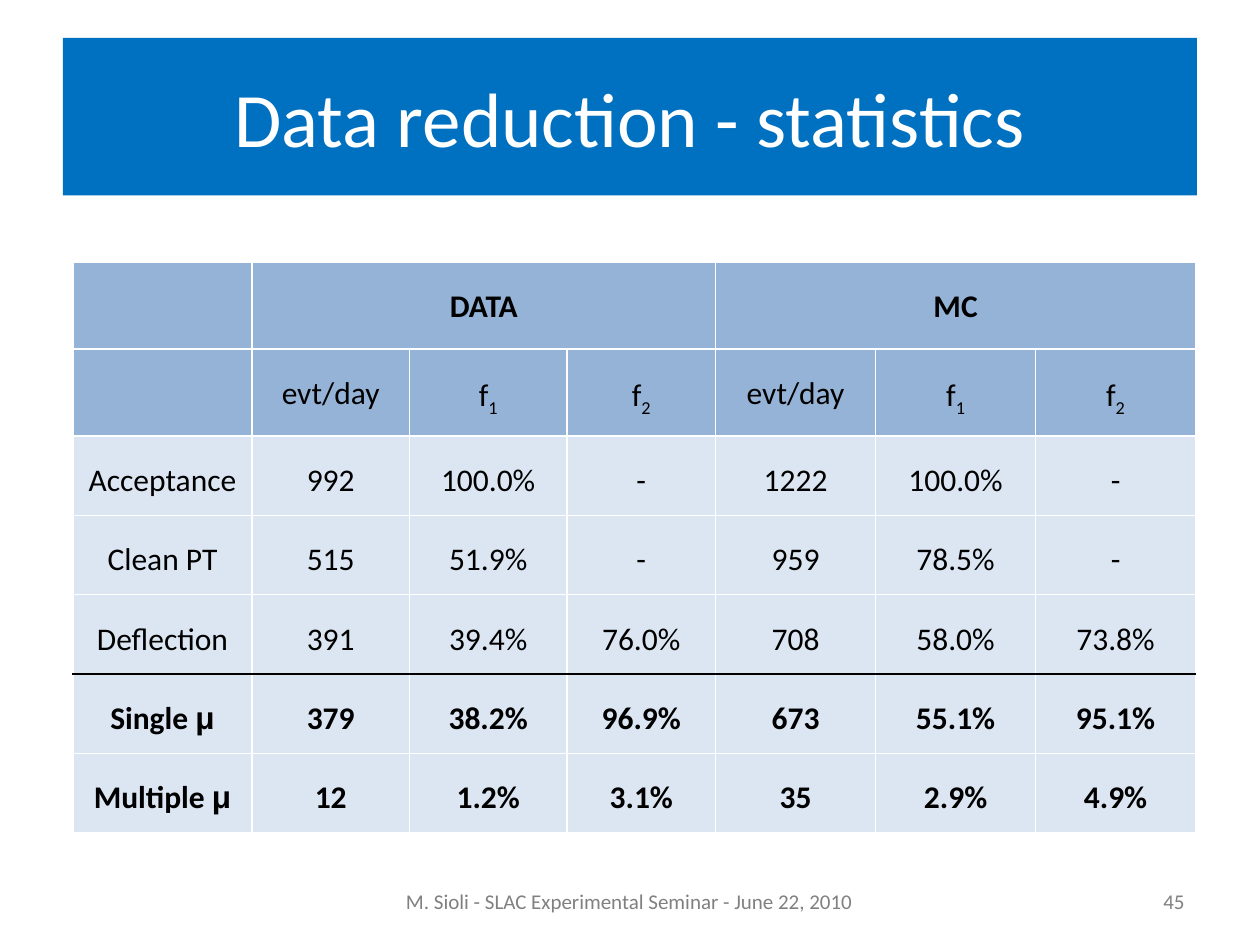
import dataclasses
import lxml.etree
import pptx
import pptx.dml.color
import pptx.enum.shapes
import pptx.enum.text
import pptx.oxml.ns
import pptx.util

Inches = pptx.util.Inches
Align = pptx.enum.text.PP_ALIGN
Anchor = pptx.enum.text.MSO_ANCHOR
qn = pptx.oxml.ns.qn


@dataclasses.dataclass(frozen=True)
class Theme:
    white: str = "FFFFFF"
    black: str = "000000"
    gray: str = "808080"
    banner: str = "0070C0"
    head: str = "95B3D7"
    body: str = "DCE6F2"
    font: str = "Calibri"
    greek: str = "Arial"
    title: int = 44
    cell: int = 18
    foot: int = 12


THEME = Theme()
WIDTHS = [1.42, 1.25, 1.25, 1.18, 1.27, 1.27, 1.27]
HEIGHTS = [0.69] * 2 + [0.63] * 5
ROWS = [
    ["", "DATA", "", "", "MC", "", ""],
    ["", "evt/day", "f_1", "f_2", "evt/day", "f_1", "f_2"],
    ["Acceptance", "992", "100.0%", "-", "1222", "100.0%", "-"],
    ["Clean PT", "515", "51.9%", "-", "959", "78.5%", "-"],
    ["Deflection", "391", "39.4%", "76.0%", "708", "58.0%", "73.8%"],
    ["Single μ", "379", "38.2%", "96.9%", "673", "55.1%", "95.1%"],
    ["Multiple μ", "12", "1.2%", "3.1%", "35", "2.9%", "4.9%"],
]
HEADS = 2
BOLD = (0, 5, 6)
RULE = 5


def paint(fill, color):
    fill.solid()
    fill.fore_color.rgb = pptx.dml.color.RGBColor.from_string(color)


def apply(item, form):
    for name, value in form.items():
        setattr(item, name, value)


def add_run(para, text, size, color, **form):
    run = para.add_run()
    run.text = text
    apply(run.font, {"name": THEME.font, "size": pptx.util.Pt(size), **form})
    paint(run.font.fill, color)
    return run


def write(shape, text, size, color, align):
    frame = shape.text_frame
    apply(frame, {"word_wrap": True, "vertical_anchor": Anchor.MIDDLE})
    para = frame.paragraphs[0]
    para.alignment = align
    add_run(para, text, size, color)


def add_title(slide, text):
    box = slide.shapes.add_shape(
        pptx.enum.shapes.MSO_SHAPE.RECTANGLE,
        Inches(0.5), Inches(0.3), Inches(9), Inches(1.25))
    box.shadow.inherit = False
    paint(box.fill, THEME.banner)
    box.line.fill.background()
    write(box, text, THEME.title, THEME.white, Align.CENTER)


def add_foot(slide, text, left, width, align):
    box = slide.shapes.add_textbox(
        Inches(left), Inches(6.95), Inches(width), Inches(0.4))
    write(box, text, THEME.foot, THEME.gray, align)


def add_edge(cell, side, color):
    props = cell._tc.get_or_add_tcPr()
    edge = lxml.etree.SubElement(
        props, qn(f"a:ln{side}"), w=str(pptx.util.Pt(1)))
    fill = lxml.etree.SubElement(edge, qn("a:solidFill"))
    lxml.etree.SubElement(fill, qn("a:srgbClr"), val=color)


def fill_cell(cell, text, row):
    dark = {"T": RULE, "B": RULE - 1}
    for side in "LRTB":
        add_edge(cell, side,
                 THEME.black if dark.get(side) == row else THEME.white)
    paint(cell.fill, THEME.head if row < HEADS else THEME.body)
    if not text:
        return
    para = cell.text_frame.paragraphs[0]
    apply(para, {"alignment": Align.CENTER, "line_spacing": 1.5})
    base, _, sub = text.partition("_")
    word, greek, _ = base.partition("μ")
    style = {"size": THEME.cell, "color": THEME.black, "bold": row in BOLD}
    add_run(para, word, **style)
    if greek:
        add_run(para, greek, name=THEME.greek, **style)
    if sub:
        run = add_run(para, sub, **style)
        run.font._element.set("baseline", "-25000")


def add_stats(slide):
    table = slide.shapes.add_table(
        len(ROWS), len(WIDTHS), Inches(0.58), Inches(2.08),
        Inches(sum(WIDTHS)), Inches(sum(HEIGHTS))).table
    apply(table, {"first_row": False, "horz_banding": False})
    for col, width in zip(table.columns, WIDTHS):
        col.width = Inches(width)
    for line, height in zip(table.rows, HEIGHTS):
        line.height = Inches(height)
    for first in (1, 4):
        table.cell(0, first).merge(table.cell(0, first + 2))
    for row, texts in enumerate(ROWS):
        for col, text in enumerate(texts):
            fill_cell(table.cell(row, col), text, row)


def main():
    deck = pptx.Presentation()
    apply(deck, {"slide_width": Inches(10), "slide_height": Inches(7.5)})
    slide = deck.slides.add_slide(deck.slide_layouts[6])
    add_title(slide, "Data reduction - statistics")
    add_foot(slide, "M. Sioli - SLAC Experimental Seminar - June 22, 2010",
             2.08, 5.83, Align.CENTER)
    add_foot(slide, "45", 8.33, 1.17, Align.RIGHT)
    add_stats(slide)
    deck.save("out.pptx")


if __name__ == "__main__":
    main()
